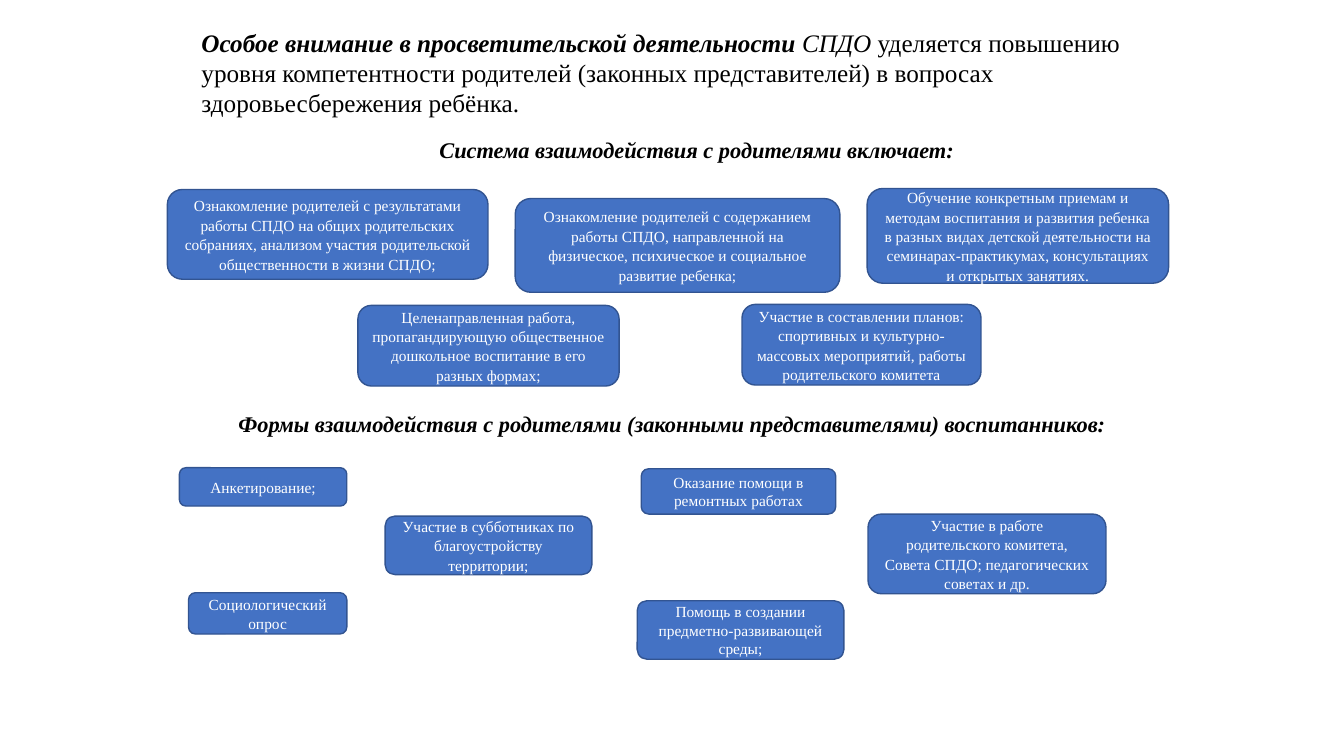
from typing import NamedTuple, Optional

from pptx import Presentation, util as u
from pptx.dml.color import RGBColor
from pptx.enum import shapes as sh, text as tx

BLUE = RGBColor(0x44, 0x72, 0xC4)
EDGE = RGBColor(0x32, 0x54, 0x91)
WHITE = RGBColor(0xFF, 0xFF, 0xFF)
BLACK = RGBColor(0, 0, 0)
FONT = "Times New Roman"


class Box(NamedTuple):
    left: float
    top: float
    width: float
    height: float
    words: str
    lead: Optional[float] = 13.8
    align: tx.PP_ALIGN = tx.PP_ALIGN.CENTER


class Part(NamedTuple):
    words: str
    bold: bool
    slant: bool


INTRO = Box(1.9, 0.22, 9.97, 1.01, "", None, tx.PP_ALIGN.LEFT)
PARTS = [
    Part("Особое внимание в просветительской деятельности ", True, True),
    Part("СПДО", False, True),
    Part(" уделяется повышению уровня компетентности родителей (законных "
         "представителей) в вопросах здоровьесбережения ребёнка.", False, False),
]
HEADS = [
    Box(4.26, 1.37, 5.42, 0.3, "Система взаимодействия с родителями включает:",
        14.1, tx.PP_ALIGN.LEFT),
    Box(2.14, 4.09, 9.05, 0.3, "Формы взаимодействия с родителями "
        "(законными представителями) воспитанников:"),
]
SYSTEM = [
    Box(1.66, 1.88, 3.18, 0.89, "Ознакомление родителей с результатами работы СПДО "
        "на общих родительских собраниях, анализом участия родительской "
        "общественности в жизни СПДО;", 14.1),
    Box(5.11, 1.97, 3.22, 0.93, "Ознакомление родителей с содержанием работы СПДО, "
        "направленной на физическое, психическое и социальное развитие ребенка;", 13.9),
    Box(8.6, 1.87, 2.99, 0.94, "Обучение конкретным приемам и методам воспитания и "
        "развития ребенка в разных видах детской деятельности на "
        "семинарах-практикумах, консультациях и открытых занятиях."),
    Box(3.55, 3.03, 2.59, 0.8, "Целенаправленная работа, пропагандирующую "
        "общественное дошкольное воспитание в его разных формах;"),
    Box(7.36, 3.02, 2.37, 0.8, "Участие в составлении планов: спортивных и "
        "культурно-массовых мероприятий, работы родительского комитета", 13.9),
]
FORMS = [
    Box(1.78, 4.64, 1.66, 0.38, "Анкетирование;"),
    Box(1.87, 5.88, 1.57, 0.41, "Социологический опрос"),
    Box(3.82, 5.12, 2.05, 0.58, "Участие в субботниках по благоустройству территории;"),
    Box(6.36, 4.65, 1.93, 0.45, "Оказание помощи в ремонтных работах", None),
    Box(6.32, 5.96, 2.05, 0.58, "Помощь в создании предметно-развивающей среды;", None),
    Box(8.61, 5.1, 2.36, 0.79, "Участие в работе родительского комитета, "
        "Совета СПДО; педагогических советах и др."),
]


def place(box: Box) -> list:
    return [u.Inches(n) for n in box[:4]]


def style(run, size: int, color: RGBColor, bold: bool = False, slant: bool = False) -> None:
    font = run.font
    font.name, font.size = FONT, u.Pt(size)
    font.bold, font.italic = bold, slant
    font.color.rgb = color


def set_par(frame, box: Box):
    frame.word_wrap = True
    par = frame.paragraphs[0]
    par.text = box.words
    par.alignment = box.align
    if box.lead:
        par.line_spacing = u.Pt(box.lead)
    return par


def add_card(slide, box: Box) -> None:
    card = slide.shapes.add_shape(sh.MSO_SHAPE.FLOWCHART_ALTERNATE_PROCESS, *place(box))
    card.shadow.inherit = False
    card.fill.solid()
    card.fill.fore_color.rgb = BLUE
    card.line.color.rgb = EDGE
    card.line.width = u.Pt(1)
    card.text_frame.vertical_anchor = tx.MSO_ANCHOR.MIDDLE
    style(set_par(card.text_frame, box).runs[0], 11, WHITE)


def add_text(slide, box: Box):
    frame = slide.shapes.add_textbox(*place(box)).text_frame
    frame.auto_size = tx.MSO_AUTO_SIZE.SHAPE_TO_FIT_TEXT
    return set_par(frame, box)


def main() -> None:
    deck = Presentation()
    deck.slide_width, deck.slide_height = u.Inches(13.33), u.Inches(7.5)
    slide = deck.slides.add_slide(deck.slide_layouts[6])

    # Opening statement with mixed emphasis
    intro = add_text(slide, INTRO)
    for part in PARTS:
        run = intro.add_run()
        run.text = part.words
        style(run, 18, BLACK, part.bold, part.slant)

    # Section headings
    for head in HEADS:
        style(add_text(slide, head).runs[0], 16, BLACK, True, True)

    # Cards of both sections
    for box in SYSTEM + FORMS:
        add_card(slide, box)

    deck.save("out.pptx")


if __name__ == "__main__":
    main()
